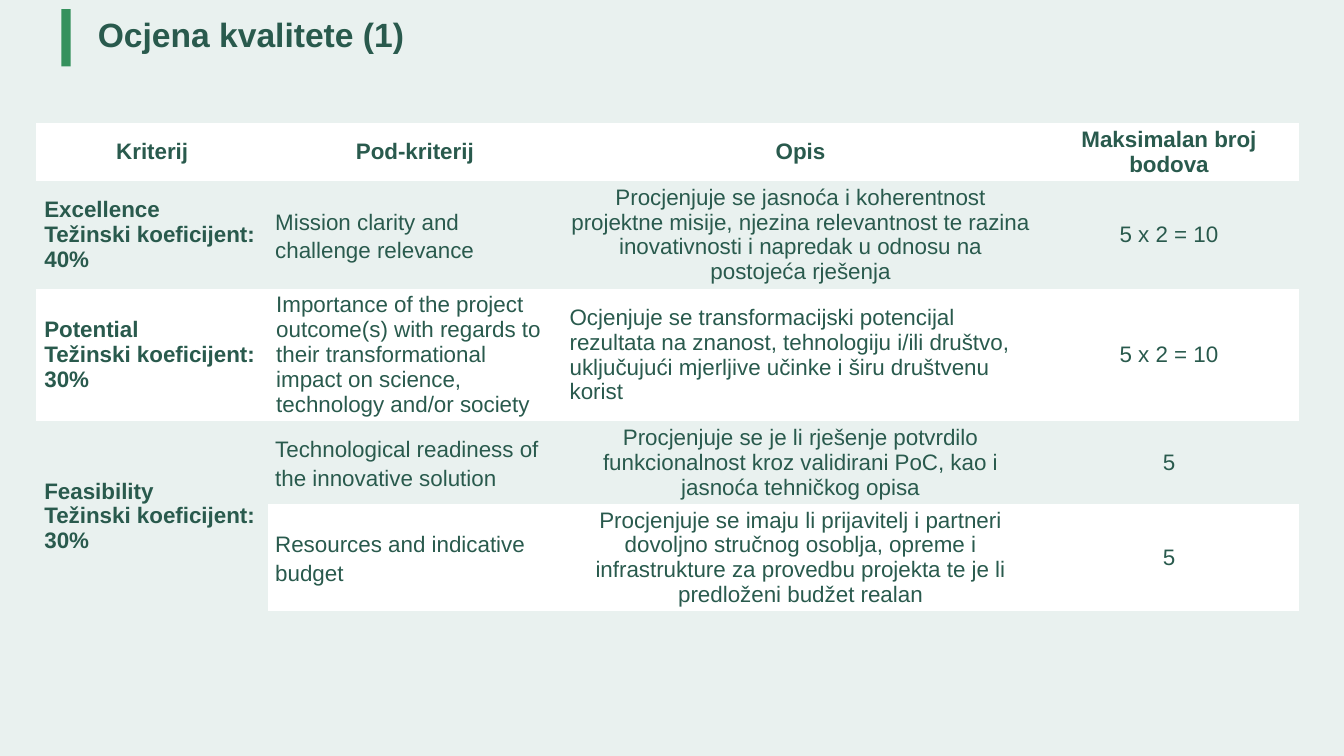
from pptx import Presentation
from pptx.dml.color import RGBColor
from pptx.enum.shapes import MSO_SHAPE
from pptx.enum.text import MSO_ANCHOR, MSO_AUTO_SIZE, PP_ALIGN
from pptx.oxml.ns import qn
from pptx.util import Inches, Pt

# Content
TITLE = "Ocjena kvalitete (1)"
HEADERS = ["Kriterij", "Pod-kriterij", "Opis", "Maksimalan broj bodova"]
CRITERIA = [
    ("Excellence\nTežinski koeficijent: 40%",
     "Mission clarity and challenge relevance",
     "Procjenjuje se jasnoća i koherentnost projektne misije, njezina relevantnost "
     "te razina inovativnosti i napredak u odnosu na postojeća rješenja",
     "5 x 2 = 10"),
    ("Potential\nTežinski koeficijent: 30%",
     "Importance of the project outcome(s) with regards to their transformational "
     "impact on science, technology and/or society",
     "Ocjenjuje se transformacijski potencijal rezultata na znanost, tehnologiju "
     "i/ili društvo, uključujući mjerljive učinke i širu društvenu korist",
     "5 x 2 = 10"),
    ("Feasibility\nTežinski koeficijent: 30%",
     "Technological readiness of the innovative solution",
     "Procjenjuje se je li rješenje potvrdilo funkcionalnost kroz validirani PoC, "
     "kao i jasnoća tehničkog opisa",
     "5"),
    ("",
     "Resources and indicative budget",
     "Procjenjuje se imaju li prijavitelj i partneri dovoljno stručnog osoblja, opreme "
     "i infrastrukture za provedbu projekta te je li predloženi budžet realan",
     "5"),
]
COLUMN_WIDTHS = [2.3, 2.91, 4.74, 2.57]
ROW_HEIGHTS = [0.57, 1.07, 1.31, 0.82, 1.06]
POTENTIAL_ROW = 2
FEASIBILITY_ROW = 3
NO_STYLE = "{2D5ABB26-0587-4C30-8999-92F81FD0307C}"
FONT, TEXT, ACCENT, BACKGROUND, BAND = "Arial", "295A4D", "35915D", "E9F1EF", "FFFFFF"


def paint(fill, color):
    fill.solid()
    fill.fore_color.rgb = RGBColor.from_string(color)


def set_font(paragraph, size, bold):
    font = paragraph.font
    font.name, font.size, font.bold = FONT, Pt(size), bold
    font.color.rgb = RGBColor.from_string(TEXT)


def fill_cell(cell, text, row, column):
    cell.text = text
    cell.vertical_anchor = MSO_ANCHOR.MIDDLE
    # Sub-criteria have tight margins and open lines, except in the Potential row
    open_lines = column == 1 and row not in (0, POTENTIAL_ROW)
    cell.margin_left = cell.margin_right = Inches(0.07 if open_lines else 0.08)
    cell.margin_top = cell.margin_bottom = Inches(0 if open_lines else 0.04)
    centered = row == 0 or column == 3 or (column == 2 and row != POTENTIAL_ROW)
    for paragraph in cell.text_frame.paragraphs:
        set_font(paragraph, 16, row == 0 or column == 0)
        paragraph.alignment = PP_ALIGN.CENTER if centered else PP_ALIGN.LEFT
        if open_lines:
            paragraph.line_spacing = 1.15
    if row % 2 == 0 and not cell.is_spanned:
        paint(cell.fill, BAND)
    else:
        cell.fill.background()


presentation = Presentation()
presentation.slide_width, presentation.slide_height = Inches(13.33), Inches(7.5)
slide = presentation.slides.add_slide(presentation.slide_layouts[5])
paint(slide.background.fill, BACKGROUND)

# Title
title = slide.shapes.title
title.left, title.top = Inches(0.87), Inches(0.13)
title.width, title.height = Inches(10.71), Inches(0.47)
title.text = TITLE
title.text_frame.auto_size = MSO_AUTO_SIZE.NONE
title.text_frame.vertical_anchor = MSO_ANCHOR.MIDDLE
paragraph = title.text_frame.paragraphs[0]
paragraph.alignment = PP_ALIGN.LEFT
paragraph.line_spacing = 0.9
set_font(paragraph, 24, True)

# Accent bar
bar = slide.shapes.add_shape(
    MSO_SHAPE.RECTANGLE, Inches(0.61), Inches(0.09), Inches(0.09), Inches(0.57))
paint(bar.fill, ACCENT)
bar.line.fill.background()
bar.shadow.inherit = False

# Criteria table
rows = [HEADERS, *CRITERIA]
table = slide.shapes.add_table(
    len(rows), len(HEADERS), Inches(0.36), Inches(1.22),
    Inches(sum(COLUMN_WIDTHS)), Inches(sum(ROW_HEIGHTS))).table
table._tbl.tblPr.find(qn("a:tableStyleId")).text = NO_STYLE
table.horz_banding = False
for column, width in zip(table.columns, COLUMN_WIDTHS):
    column.width = Inches(width)
for table_row, height in zip(table.rows, ROW_HEIGHTS):
    table_row.height = Inches(height)
table.cell(FEASIBILITY_ROW, 0).merge(table.cell(FEASIBILITY_ROW + 1, 0))
for row, texts in enumerate(rows):
    for column, text in enumerate(texts):
        fill_cell(table.cell(row, column), text, row, column)

presentation.save("out.pptx")
